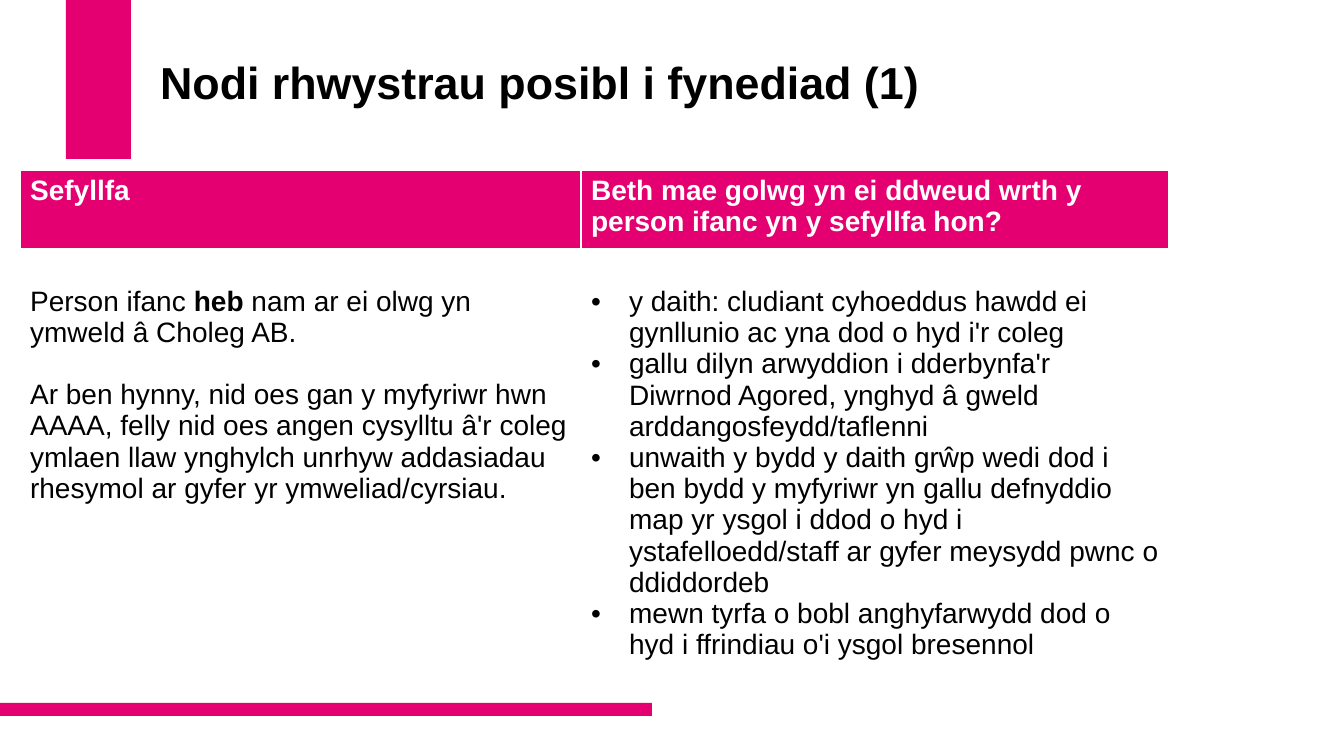
import dataclasses

import lxml.etree
import pptx
import pptx.dml.color
import pptx.enum.shapes
import pptx.enum.text
import pptx.oxml.ns
import pptx.util

EMU_PER_PX = 914400 / 100.8
PINK = pptx.dml.color.RGBColor(0xE5, 0x00, 0x71)
WHITE = pptx.dml.color.RGBColor(0xFF, 0xFF, 0xFF)
BLACK = pptx.dml.color.RGBColor(0x00, 0x00, 0x00)
FONT = "Arial"
BULLET_INDENT = 38
BODY_TOP_MARGIN = 36
BOLD_MARK = "**"


@dataclasses.dataclass(frozen=True)
class Box:
    left: int
    top: int
    width: int
    height: int


@dataclasses.dataclass(frozen=True)
class CellStyle:
    fill: pptx.dml.color.RGBColor
    color: pptx.dml.color.RGBColor
    bold: bool
    bottom_border: int
    top_margin: int


@dataclasses.dataclass(frozen=True)
class CellContent:
    """Paragraphs of one cell; text between bold marks is bold."""
    paragraphs: tuple[str, ...]
    bulleted: bool = False
    gap_points: int = 0


HEADER = CellStyle(PINK, WHITE, True, 3, 5)
BODY = CellStyle(WHITE, BLACK, False, 1, BODY_TOP_MARGIN)

ACCENT_BARS = (Box(66, 0, 65, 159), Box(0, 703, 652, 13))
TITLE_BOX = Box(150, 40, 968, 146)
TABLE_BOX = Box(20, 170, 1149, 520)
COLUMN_WIDTHS = (561, 588)
ROW_HEIGHTS = (80, 440)

ROWS = (
    (HEADER, (
        CellContent(("Sefyllfa",)),
        CellContent(("Beth mae golwg yn ei ddweud wrth y person ifanc yn y sefyllfa hon?",)),
    )),
    (BODY, (
        CellContent((
            "Person ifanc **heb** nam ar ei olwg yn ymweld â Choleg AB.",
            "Ar ben hynny, nid oes gan y myfyriwr hwn AAAA, felly nid oes angen cysylltu "
            "â'r coleg ymlaen llaw ynghylch unrhyw addasiadau rhesymol ar gyfer yr "
            "ymweliad/cyrsiau.",
        ), gap_points=22),
        CellContent((
            "y daith: cludiant cyhoeddus hawdd ei gynllunio ac yna dod o hyd i'r coleg",
            "gallu dilyn arwyddion i dderbynfa'r Diwrnod Agored, ynghyd â gweld "
            "arddangosfeydd/taflenni",
            "unwaith y bydd y daith grŵp wedi dod i ben bydd y myfyriwr yn gallu defnyddio "
            "map yr ysgol i ddod o hyd i ystafelloedd/staff ar gyfer meysydd pwnc o "
            "ddiddordeb",
            "mewn tyrfa o bobl anghyfarwydd dod o hyd i ffrindiau o'i ysgol bresennol",
        ), bulleted=True),
    )),
)


def px(length: int) -> pptx.util.Emu:
    return pptx.util.Emu(round(length * EMU_PER_PX))


def edges(box: Box) -> tuple[pptx.util.Emu, ...]:
    return tuple(px(length) for length in dataclasses.astuple(box))


def style_font(font, size: int, color: pptx.dml.color.RGBColor, bold: bool) -> None:
    font.name = FONT
    font.size = pptx.util.Pt(size)
    font.color.rgb = color
    font.bold = bold


def add_accent_bar(slide, box: Box) -> None:
    shape = slide.shapes.add_shape(pptx.enum.shapes.MSO_SHAPE.RECTANGLE, *edges(box))
    shape.shadow.inherit = False
    shape.fill.solid()
    shape.fill.fore_color.rgb = PINK
    shape.line.fill.background()


def set_title(slide, text: str) -> None:
    title = slide.shapes.title
    title.left, title.top, title.width, title.height = edges(TITLE_BOX)
    text_frame = title.text_frame
    text_frame.text = text
    text_frame.word_wrap = True
    text_frame.vertical_anchor = pptx.enum.text.MSO_ANCHOR.MIDDLE
    text_frame.margin_bottom = px(61)
    paragraph = text_frame.paragraphs[0]
    paragraph.alignment = pptx.enum.text.PP_ALIGN.LEFT
    paragraph.line_spacing = 0.9
    style_font(paragraph.runs[0].font, 32, BLACK, True)


def add_bullet(paragraph) -> None:
    properties = paragraph._p.get_or_add_pPr()
    properties.set("marL", str(px(BULLET_INDENT)))
    properties.set("indent", str(-px(BULLET_INDENT)))
    for tag, name, value in (("a:buFont", "typeface", FONT), ("a:buChar", "char", "•")):
        element = lxml.etree.SubElement(properties, pptx.oxml.ns.qn(tag))
        element.set(name, value)


def set_borders(cell, bottom: int) -> None:
    """White borders of one point, with the bottom one in the given width."""
    properties = cell._tc.get_or_add_tcPr()
    borders = (("a:lnL", 1), ("a:lnR", 1), ("a:lnT", 1), ("a:lnB", bottom))
    for position, (tag, points) in enumerate(borders):
        line = lxml.etree.Element(pptx.oxml.ns.qn(tag), w=str(pptx.util.Pt(points)))
        fill = lxml.etree.SubElement(line, pptx.oxml.ns.qn("a:solidFill"))
        lxml.etree.SubElement(fill, pptx.oxml.ns.qn("a:srgbClr"), val=str(WHITE))
        properties.insert(position, line)


def fill_cell(cell, content: CellContent, style: CellStyle) -> None:
    cell.fill.solid()
    cell.fill.fore_color.rgb = style.fill
    cell.margin_top = px(style.top_margin)
    set_borders(cell, style.bottom_border)
    text_frame = cell.text_frame
    for index, text in enumerate(content.paragraphs):
        paragraph = text_frame.add_paragraph() if index else text_frame.paragraphs[0]
        if index and content.gap_points:
            paragraph.space_before = pptx.util.Pt(content.gap_points)
        if content.bulleted:
            add_bullet(paragraph)
        for part, words in enumerate(text.split(BOLD_MARK)):
            run = paragraph.add_run()
            run.text = words
            style_font(run.font, 20, style.color, style.bold or part % 2 == 1)


def add_situation_table(slide) -> None:
    frame = slide.shapes.add_table(len(ROWS), len(COLUMN_WIDTHS), *edges(TABLE_BOX))
    table = frame.table
    table.horz_banding = False
    for column, width in zip(table.columns, COLUMN_WIDTHS):
        column.width = px(width)
    for row, height, (style, contents) in zip(table.rows, ROW_HEIGHTS, ROWS):
        row.height = px(height)
        for cell, content in zip(row.cells, contents):
            fill_cell(cell, content, style)


def main() -> None:
    presentation = pptx.Presentation()
    presentation.slide_width = px(1344)
    presentation.slide_height = px(756)
    slide = presentation.slides.add_slide(presentation.slide_layouts[5])
    for bar in ACCENT_BARS:
        add_accent_bar(slide, bar)
    set_title(slide, "Nodi rhwystrau posibl i fynediad (1)")
    add_situation_table(slide)
    presentation.save("out.pptx")


if __name__ == "__main__":
    main()
